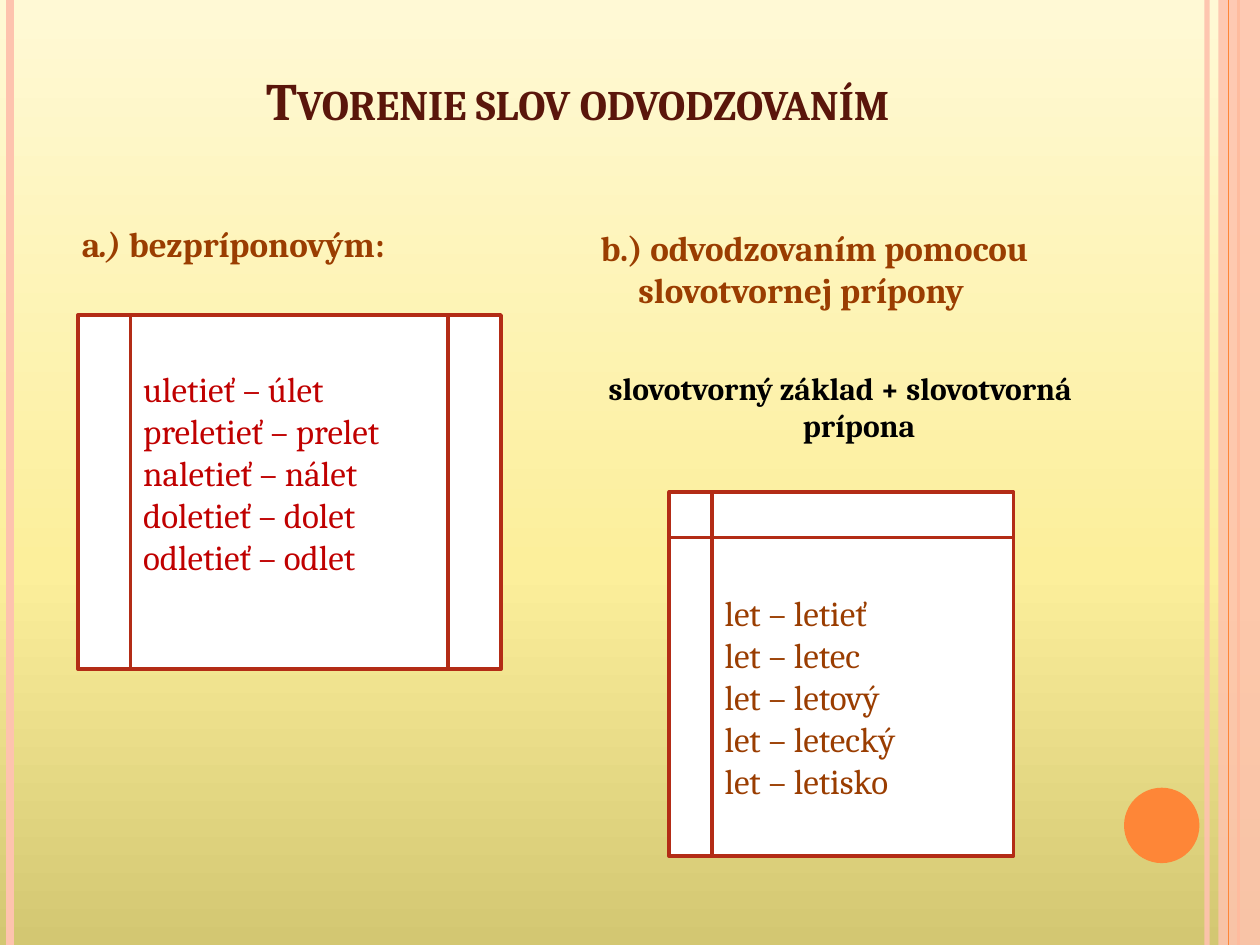
from copy import deepcopy

from lxml import etree
from pptx import Presentation
from pptx.dml.color import RGBColor
from pptx.enum.shapes import MSO_CONNECTOR, MSO_SHAPE
from pptx.enum.text import MSO_ANCHOR, PP_ALIGN
from pptx.oxml.ns import qn
from pptx.util import Cm, Pt

STRAIGHT = MSO_CONNECTOR.STRAIGHT
RECT, OVAL = MSO_SHAPE.RECTANGLE, MSO_SHAPE.OVAL
PROCESS = MSO_SHAPE.FLOWCHART_PREDEFINED_PROCESS
STORAGE = MSO_SHAPE.FLOWCHART_INTERNAL_STORAGE
TOP, MIDDLE, BOTTOM = MSO_ANCHOR.TOP, MSO_ANCHOR.MIDDLE, MSO_ANCHOR.BOTTOM
LEFT, CENTER, JUSTIFY = PP_ALIGN.LEFT, PP_ALIGN.CENTER, PP_ALIGN.JUSTIFY

WIDTH, HEIGHT = 25.4, 19.05
FONT = "Cambria"
PINK, ORANGE, BROWN = "FEC3AE", "FE8637", "9A3D01"
GRADIENT = [(0, "D3C772"), (0.4, "FCEF9B"), (1, "FFF9D5")]
STRIPES = [(24.33, PINK, 3, 93), (0.2, PINK, 4.5, 100), (24.97, ORANGE, 1.5, 100)]
HANGING = 0.76
HEADING = {"size": Pt(20), "bold": True}
UNPREFIXED = ["uletieť – úlet", "preletieť – prelet", "naletieť – nálet",
              "doletieť – dolet", "odletieť – odlet"]
SUFFIXED = ["let – letieť", "let – letec", "let – letový", "let – letecký",
            "let – letisko"]


def rgb(color):
    return RGBColor.from_string(color)


def set_attrs(obj, values):
    for name, value in values.items():
        setattr(obj, name, value)


def set_alpha(sp, percent):
    color = sp._element.spPr.find(".//" + qn("a:srgbClr"))
    etree.SubElement(color, qn("a:alpha")).set("val", str(percent * 1000))


def paint_background(slide):
    fill = slide.background.fill
    fill.gradient()
    fill.gradient_angle = 90
    stops = slide._element.find(".//" + qn("a:gsLst"))
    stops.append(deepcopy(stops[0]))
    for stop, (position, color) in zip(fill.gradient_stops, GRADIENT):
        stop.position = position
        stop.color.rgb = rgb(color)


def add_stripe(slide, x, color, width, opacity=100):
    """Draw a vertical line over the full slide height."""
    line = slide.shapes.add_connector(STRAIGHT, Cm(x), 0, Cm(x), Cm(HEIGHT))
    line.line.color.rgb = rgb(color)
    line.line.width = Pt(width)
    etree.SubElement(line._element.spPr, qn("a:effectLst"))
    if opacity < 100:
        set_alpha(line, opacity)


def add_figure(slide, kind, box, fill, outline=None):
    sp = slide.shapes.add_shape(kind, *map(Cm, box))
    sp.shadow.inherit = False
    sp.fill.solid()
    sp.fill.fore_color.rgb = rgb(fill)
    if outline:
        sp.line.color.rgb = rgb(outline)
        sp.line.width = Pt(2)
    else:
        sp.line.fill.background()
    return sp


def add_frame(slide, box, anchor=TOP):
    tf = slide.shapes.add_textbox(*map(Cm, box)).text_frame
    set_attrs(tf, {"word_wrap": True, "vertical_anchor": anchor})
    return tf


def add_paragraph(tf, runs, color, align=LEFT, before=0, hanging=0):
    """Add a paragraph of (text, font values) runs, reusing an empty first one."""
    p = tf.paragraphs[0]
    if p.runs:
        p = tf.add_paragraph()
    set_attrs(p, {"alignment": align, "space_before": Pt(before)})
    if hanging:
        pPr = p._p.get_or_add_pPr()
        pPr.set("marL", str(Cm(hanging)))
        pPr.set("indent", str(-Cm(hanging)))
    for text, values in runs:
        r = p.add_run()
        r.text = text
        set_attrs(r.font, {"name": FONT, **values})
        r.font.color.rgb = rgb(color)
    return p


def add_word_box(slide, kind, box, words, color, align, bottom=0.13):
    sp = add_figure(slide, kind, box, "FFFFFF", "B32C16")
    tf = sp.text_frame
    set_attrs(tf, {"word_wrap": True, "vertical_anchor": MIDDLE,
                   "margin_bottom": Cm(bottom)})
    for word in words:
        add_paragraph(tf, [(word, {"size": Pt(20)})], color, align)


def add_decoration(slide):
    for stripe in STRIPES:
        add_stripe(slide, *stripe)
    band = add_figure(slide, RECT, (24.56, 0, WIDTH - 24.56, HEIGHT), PINK)
    set_alpha(band, 87)
    add_stripe(slide, 24.77, ORANGE, 0.75)
    add_figure(slide, OVAL, (22.66, 15.88, 1.52, 1.52), ORANGE)


def add_title(slide):
    tf = add_frame(slide, (1.27, 0.76, 20.75, 2.01), BOTTOM)
    p = add_paragraph(tf, [("Tvorenie slov odvodzovaním",
                            {"size": Pt(30), "bold": True})], "5A160B", CENTER)
    p.runs[0].font._element.set("cap", "small")


def add_headings(slide):
    left = add_frame(slide, (1.4, 4.37, 10.16, 12.7))
    add_paragraph(left, [("a", HEADING), (".) ", {**HEADING, "italic": True}),
                         ("bezpríponovým:", HEADING)],
                  BROWN, before=6, hanging=HANGING)

    right = add_frame(slide, (11.86, 4.45, 10.16, 12.83))
    add_paragraph(right, [("b.) odvodzovaním pomocou slovotvornej prípony", HEADING)],
                  BROWN, before=6, hanging=HANGING)
    add_paragraph(right, [("slovotvorný základ + slovotvorná prípona",
                           {"size": Pt(18), "bold": True})],
                  "000000", CENTER, before=33, hanging=HANGING)


def main():
    prs = Presentation()
    prs.slide_width, prs.slide_height = Cm(WIDTH), Cm(HEIGHT)
    slide = prs.slides.add_slide(prs.slide_layouts[6])
    paint_background(slide)
    add_decoration(slide)
    add_title(slide)
    add_headings(slide)
    add_word_box(slide, PROCESS, (1.57, 6.35, 8.53, 7.14), UNPREFIXED,
                 "C00000", LEFT, bottom=0.9)
    add_word_box(slide, STORAGE, (13.49, 9.92, 6.94, 7.34), SUFFIXED,
                 BROWN, JUSTIFY)
    prs.save("out.pptx")


if __name__ == "__main__":
    main()
